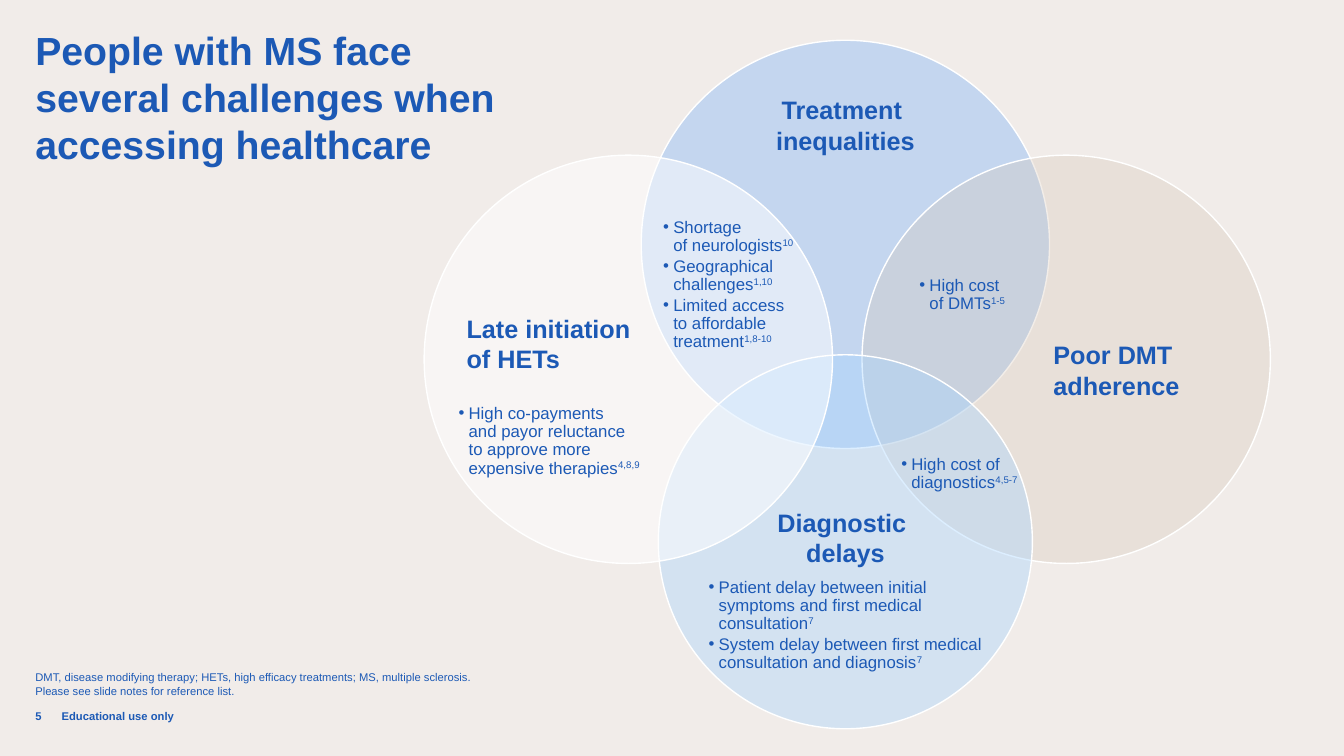
"""Build a slide of four overlapping circles on barriers to MS healthcare."""
from dataclasses import dataclass

from lxml.etree import SubElement
from pptx import Presentation
from pptx.dml.color import RGBColor
from pptx.enum.shapes import MSO_SHAPE
from pptx.enum.text import MSO_ANCHOR, PP_ALIGN
from pptx.oxml.ns import qn
from pptx.util import Inches, Pt


@dataclass(frozen=True)
class Theme:
    font: str = "Arial"
    ink: str = "1C59B5"
    paper: str = "F1ECE9"
    outline: str = "FFFFFF"
    sky: str = "5DA6FF"
    sand: str = "D6C6B6"
    ice: str = "A8D5FF"
    white: str = "FFFFFF"
    title: int = 28
    heading: int = 18
    body: int = 12
    small: int = 8


theme = Theme()
prs = Presentation()
prs.slide_width, prs.slide_height = Inches(13.33), Inches(7.5)
col, row = prs.slide_width / 100, prs.slide_height / 100
s = prs.slides.add_slide(prs.slide_layouts[6])
s.background.fill.solid()
s.background.fill.fore_color.rgb = RGBColor.from_string(theme.paper)


def add_text(box, lines, size, bold=False, align=PP_ALIGN.LEFT, inset=True,
             bullet=False, spacing=None, before=0, anchor=MSO_ANCHOR.TOP):
    """Add a text box; '^' starts a superscript and a newline breaks the line."""
    x, y, w, h = box
    sp = s.shapes.add_textbox(int(x * col), int(y * row), int(w * col), int(h * row))
    tf = sp.text_frame
    tf.word_wrap = True
    tf.vertical_anchor = anchor
    if not inset:
        tf.margin_left = tf.margin_right = tf.margin_top = tf.margin_bottom = 0
    for i, line in enumerate(lines):
        p = tf.paragraphs[0] if i == 0 else tf.add_paragraph()
        p.alignment = align
        if spacing:
            p.line_spacing = spacing
        if i:
            p.space_before = Pt(before)
        if bullet:
            pPr = p._p.get_or_add_pPr()
            pPr.set("marL", str(Inches(0.1)))
            pPr.set("indent", str(-Inches(0.1)))
            SubElement(pPr, qn("a:buFont")).set("typeface", theme.font)
            SubElement(pPr, qn("a:buChar")).set("char", "•")
        for raised, part in enumerate(line.split("^")):
            for j, piece in enumerate(part.split("\n")):
                if j:
                    p.add_line_break()
                r = p.add_run()
                r.text = piece
                r.font.name, r.font.size, r.font.bold = theme.font, Pt(size), bold
                r.font.color.rgb = RGBColor.from_string(theme.ink)
                if raised:
                    r._r.get_or_add_rPr().set("baseline", "30000")


left, foot = 2.63, 93.87
add_text((left, 3.47, 37.66, 45.33),
         ["People with MS face several challenges when accessing healthcare"],
         theme.title, bold=True, inset=False)
add_text((left, 81.2, 38.78, 11.2),
         ["DMT, disease modifying therapy; HETs, high efficacy treatments; MS, multiple sclerosis.",
          "Please see slide notes for reference list."],
         theme.small, inset=False, spacing=0.95, before=1, anchor=MSO_ANCHOR.BOTTOM)
for x, w, label in [(left, 1.65, "5"), (4.58, 33.76, "Educational use only")]:
    add_text((x, foot, w, 2.67), [label], theme.small, bold=True, inset=False)

circles = [
    (62.9, 32.33, 54, theme.sky, 30),
    (79.33, 47.53, 54, theme.sand, 30),
    (62.9, 71.67, 49.47, theme.ice, 40),
    (46.75, 47.53, 54, theme.white, 50),
]
for cx, cy, rows, color, opacity in circles:
    d = rows * row
    sp = s.shapes.add_shape(MSO_SHAPE.OVAL, int(cx * col - d / 2),
                            int(cy * row - d / 2), int(d), int(d))
    sp.shadow.inherit = False
    sp.fill.solid()
    sp.fill.fore_color.rgb = RGBColor.from_string(color)
    clr = sp._element.spPr.find(qn("a:solidFill"))[0]
    SubElement(clr, qn("a:alpha")).set("val", str(opacity * 1000))
    sp.line.color.rgb = RGBColor.from_string(theme.outline)
    sp.line.width = Pt(1)

headings = [
    (55.36, 11.87, 15.08, "Treatment \ninequalities", PP_ALIGN.CENTER),
    (77.64, 44.27, 13.95, "Poor DMT \nadherence", PP_ALIGN.LEFT),
    (53.04, 66.4, 19.73, "Diagnostic \ndelays", PP_ALIGN.CENTER),
    (33.98, 40.8, 13.73, "Late initiation of HETs", PP_ALIGN.LEFT),
]
for x, y, w, label, align in headings:
    add_text((x, y, w, 9.47), [label], theme.heading, bold=True, align=align)

challenges = [
    ((48.61, 28.27, 13.73, 19.07),
     ["Shortage \nof neurologists^10", "Geographical \nchallenges^1,10",
      "Limited access \nto affordable treatment^1,8-10"]),
    ((67.67, 36, 9.6, 6.13), ["High cost \nof DMTs^1-5"]),
    ((66.32, 59.6, 11.18, 6.13), ["High cost of diagnostics^4,5-7"]),
    ((33.38, 52.93, 25.51, 11.07),
     ["High co-payments \nand payor reluctance \nto approve more \nexpensive therapies^4,8,9"]),
    ((51.99, 75.87, 22.73, 13.87),
     ["Patient delay between initial \nsymptoms and first medical \nconsultation^7",
      "System delay between first medical consultation and diagnosis^7"]),
]
for box, lines in challenges:
    add_text(box, lines, theme.body, bullet=True, spacing=0.9, before=2)

prs.save("out.pptx")
